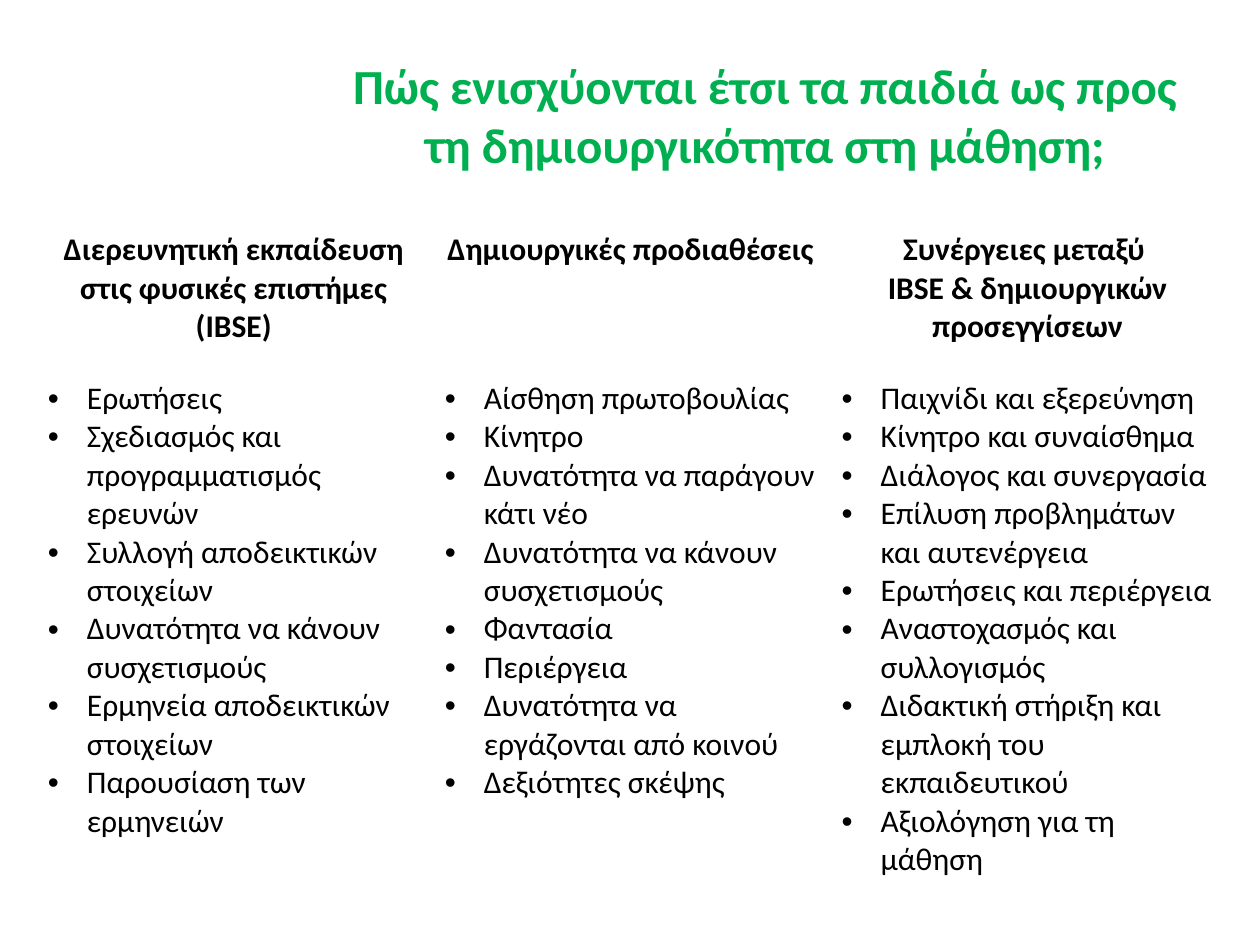
from dataclasses import dataclass

from lxml.etree import SubElement
from pptx import Presentation
from pptx.dml.color import RGBColor
from pptx.enum.text import MSO_ANCHOR as Anchor, MSO_AUTO_SIZE as AutoSize, PP_ALIGN as Align
from pptx.oxml.ns import qn
from pptx.util import Inches, Pt


@dataclass(frozen=True)
class Theme:
    font: str = "Calibri"
    title_color: RGBColor = RGBColor(0x00, 0xB0, 0x50)
    text_color: RGBColor = RGBColor(0x00, 0x00, 0x00)
    title_size: int = 28
    text_size: int = 18
    indent: float = 0.31


THEME = Theme()
TITLE = "Πώς ενισχύονται έτσι τα παιδιά ως προς τη δημιουργικότητα στη μάθηση;"
COLUMNS = [
    ("Διερευνητική εκπαίδευση στις φυσικές επιστήμες (IBSE)", [
        "Ερωτήσεις",
        "Σχεδιασμός και προγραμματισμός ερευνών",
        "Συλλογή αποδεικτικών στοιχείων",
        "Δυνατότητα να κάνουν συσχετισμούς",
        "Ερμηνεία αποδεικτικών στοιχείων",
        "Παρουσίαση των ερμηνειών",
    ]),
    ("Δημιουργικές προδιαθέσεις", [
        "Αίσθηση πρωτοβουλίας",
        "Κίνητρο",
        "Δυνατότητα να παράγουν κάτι νέο",
        "Δυνατότητα να κάνουν συσχετισμούς",
        "Φαντασία",
        "Περιέργεια",
        "Δυνατότητα να εργάζονται από κοινού",
        "Δεξιότητες σκέψης",
    ]),
    ("Συνέργειες μεταξύ \vIBSE & δημιουργικών προσεγγίσεων", [
        "Παιχνίδι και εξερεύνηση",
        "Κίνητρο και συναίσθημα",
        "Διάλογος και συνεργασία",
        "Επίλυση προβλημάτων και αυτενέργεια",
        "Ερωτήσεις και περιέργεια",
        "Αναστοχασμός και συλλογισμός",
        "Διδακτική στήριξη και εμπλοκή του εκπαιδευτικού",
        "Αξιολόγηση για τη μάθηση",
    ]),
]
ROW_HEIGHTS = [1.18, 4.07, 0.62]


def format_runs(para, size, color, bold):
    for span in para.runs:
        span.font.name = THEME.font
        span.font.size = Pt(size)
        span.font.bold = bold
        span.font.color.rgb = color


def add_bullet(para):
    properties = para._p.get_or_add_pPr()
    properties.set("marL", str(Inches(THEME.indent)))
    properties.set("indent", str(-Inches(THEME.indent)))
    SubElement(properties, qn("a:buFont"), typeface="Arial")
    SubElement(properties, qn("a:buChar"), char="•")


def place_title(page, box):
    title = page.shapes.title
    title.left, title.top, title.width, title.height = map(Inches, box)
    frame = title.text_frame
    frame.text = TITLE
    frame.word_wrap = True
    frame.auto_size = AutoSize.NONE
    frame.vertical_anchor = Anchor.MIDDLE
    para = frame.paragraphs[0]
    para.alignment = Align.CENTER
    format_runs(para, THEME.title_size, THEME.title_color, True)


def fill_heading(cell, heading):
    cell.text_frame.text = heading
    para = cell.text_frame.paragraphs[0]
    para.alignment = Align.CENTER
    format_runs(para, THEME.text_size, THEME.text_color, True)


def fill_list(cell, items):
    cell.text_frame.text = "\n".join(items)
    for para in cell.text_frame.paragraphs:
        add_bullet(para)
        format_runs(para, THEME.text_size, THEME.text_color, False)


def place_table(page, box):
    table = page.shapes.add_table(len(ROW_HEIGHTS), len(COLUMNS), *map(Inches, box)).table
    table.first_row = False
    table.horz_banding = False
    for row, height in zip(table.rows, ROW_HEIGHTS):
        row.height = Inches(height)
    for cell in table.iter_cells():
        cell.fill.background()
    for index, (heading, items) in enumerate(COLUMNS):
        fill_heading(table.cell(0, index), heading)
        fill_list(table.cell(1, index), items)


def main():
    deck = Presentation()
    deck.slide_width, deck.slide_height = Inches(10), Inches(7.5)
    page = deck.slides.add_slide(deck.slide_layouts[5])
    place_title(page, (2.64, 0.21, 6.86, 1.4))
    place_table(page, (0.28, 1.78, 9.45, sum(ROW_HEIGHTS)))
    deck.save("out.pptx")


if __name__ == "__main__":
    main()
